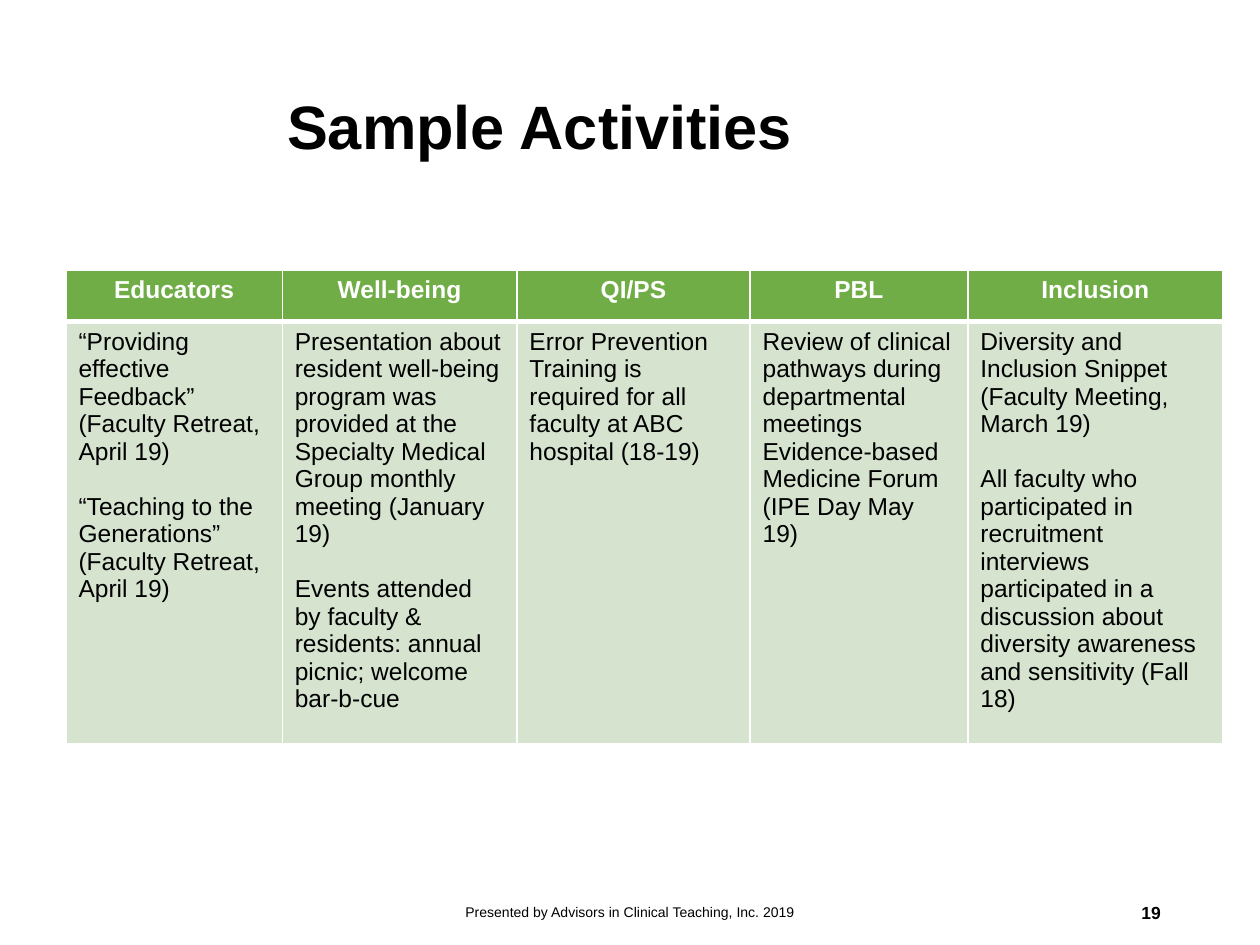
from dataclasses import dataclass

from lxml import etree
from pptx import Presentation
from pptx import util as u
from pptx.dml.color import RGBColor
from pptx.enum import text
from pptx.oxml.ns import qn


@dataclass(frozen=True)
class Theme:
    font: str = "Arial"
    ink: str = "000000"
    white: str = "FFFFFF"
    green: str = "70AD47"
    pale: str = "D5E3CF"
    title: float = 35
    body: float = 14
    page: float = 10
    foot: float = 8
    gap: float = 15.7
    thin: float = 1
    thick: float = 3


LEFT = text.PP_ALIGN.LEFT
MID = text.PP_ALIGN.CENTER
RIGHT = text.PP_ALIGN.RIGHT

HEADS = ["Educators", "Well-being", "QI/PS", "PBL", "Inclusion"]
WIDTHS = [4.36, 4.73, 4.7, 4.39, 5.14]
ROWS = [1.04, 8]
GAPPED = [True, True, False, False, True]
ITEMS = [
    ["“Providing effective Feedback” (Faculty Retreat, April 19)",
     "“Teaching to the Generations” (Faculty Retreat, April 19)"],
    ["Presentation about resident well-being program was provided at the "
     "Specialty Medical Group monthly meeting (January 19)",
     "Events attended by faculty & residents: annual picnic; welcome bar-b-cue"],
    ["Error Prevention Training is required for all faculty at ABC hospital (18-19)"],
    ["Review of clinical pathways during departmental meetings",
     "Evidence-based Medicine Forum (IPE Day May 19)"],
    ["Diversity and Inclusion Snippet (Faculty Meeting, March 19)",
     "All faculty who participated in recruitment interviews participated in a "
     "discussion about diversity awareness and sensitivity (Fall 18)"],
]


class Deck:
    def __init__(self, theme):
        self.theme = theme
        self.prs = Presentation()
        self.prs.slide_width = u.Cm(25.4)
        self.prs.slide_height = u.Cm(19.05)
        self.slide = self.prs.slides.add_slide(self.prs.slide_layouts[6])

    def words(self, frame, lines, size, color, bold=False, align=LEFT, gap=0):
        for i, line in enumerate(lines):
            para = frame.add_paragraph() if i else frame.paragraphs[0]
            para.alignment = align
            if i and gap:
                para.space_before = u.Pt(gap)
            run = para.add_run()
            run.text = line
            run.font.name = self.theme.font
            run.font.size = u.Pt(size)
            run.font.bold = bold
            run.font.color.rgb = RGBColor.from_string(color)

    def label(self, line, spot, size, bold=False, align=LEFT, pad=0.13):
        frame = self.slide.shapes.add_textbox(*map(u.Cm, spot)).text_frame
        frame.word_wrap = True
        frame.vertical_anchor = text.MSO_ANCHOR.MIDDLE
        frame.margin_left = frame.margin_right = u.Cm(0.25)
        frame.margin_top = frame.margin_bottom = u.Cm(pad)
        self.words(frame, [line], size, self.theme.ink, bold, align)

    def border(self, cell, heavy):
        props = cell._tc.get_or_add_tcPr()
        for i, side in enumerate(("lnL", "lnR", "lnT", "lnB")):
            width = self.theme.thick if side == heavy else self.theme.thin
            line = etree.Element(qn(f"a:{side}"), w=str(u.Pt(width)))
            fill = etree.SubElement(line, qn("a:solidFill"))
            etree.SubElement(fill, qn("a:srgbClr"), val=self.theme.white)
            props.insert(i, line)

    def fill(self, cell, color, heavy):
        cell.fill.solid()
        cell.fill.fore_color.rgb = RGBColor.from_string(color)
        self.border(cell, heavy)

    def table(self, left, top):
        t = self.theme
        spot = map(u.Cm, (left, top, sum(WIDTHS), sum(ROWS)))
        grid = self.slide.shapes.add_table(len(ROWS), len(HEADS), *spot).table
        grid.horz_banding = False
        for row, high in zip(grid.rows, ROWS):
            row.height = u.Cm(high)
        for i, (head, lines) in enumerate(zip(HEADS, ITEMS)):
            grid.columns[i].width = u.Cm(WIDTHS[i])
            top_cell, low_cell = grid.cell(0, i), grid.cell(1, i)
            self.fill(top_cell, t.green, "lnB")
            self.fill(low_cell, t.pale, "lnT")
            self.words(top_cell.text_frame, [head], t.body, t.white, True, MID)
            self.words(low_cell.text_frame, lines, t.body, t.ink,
                       gap=t.gap if GAPPED[i] else 0)


def main():
    theme = Theme()
    deck = Deck(theme)
    deck.label("Sample Activities", (5.54, 0.69, 18.14, 3.68), theme.title, True, pad=0.25)
    deck.label("19", (17.93, 17.88, 5.72, 1.02), theme.page, True, RIGHT)
    deck.table(1.33, 5.44)
    deck.label("Presented by Advisors in Clinical Teaching, Inc. 2019",
               (8.41, 17.88, 8.59, 1.02), theme.foot, align=MID)
    deck.prs.save("out.pptx")


if __name__ == "__main__":
    main()
